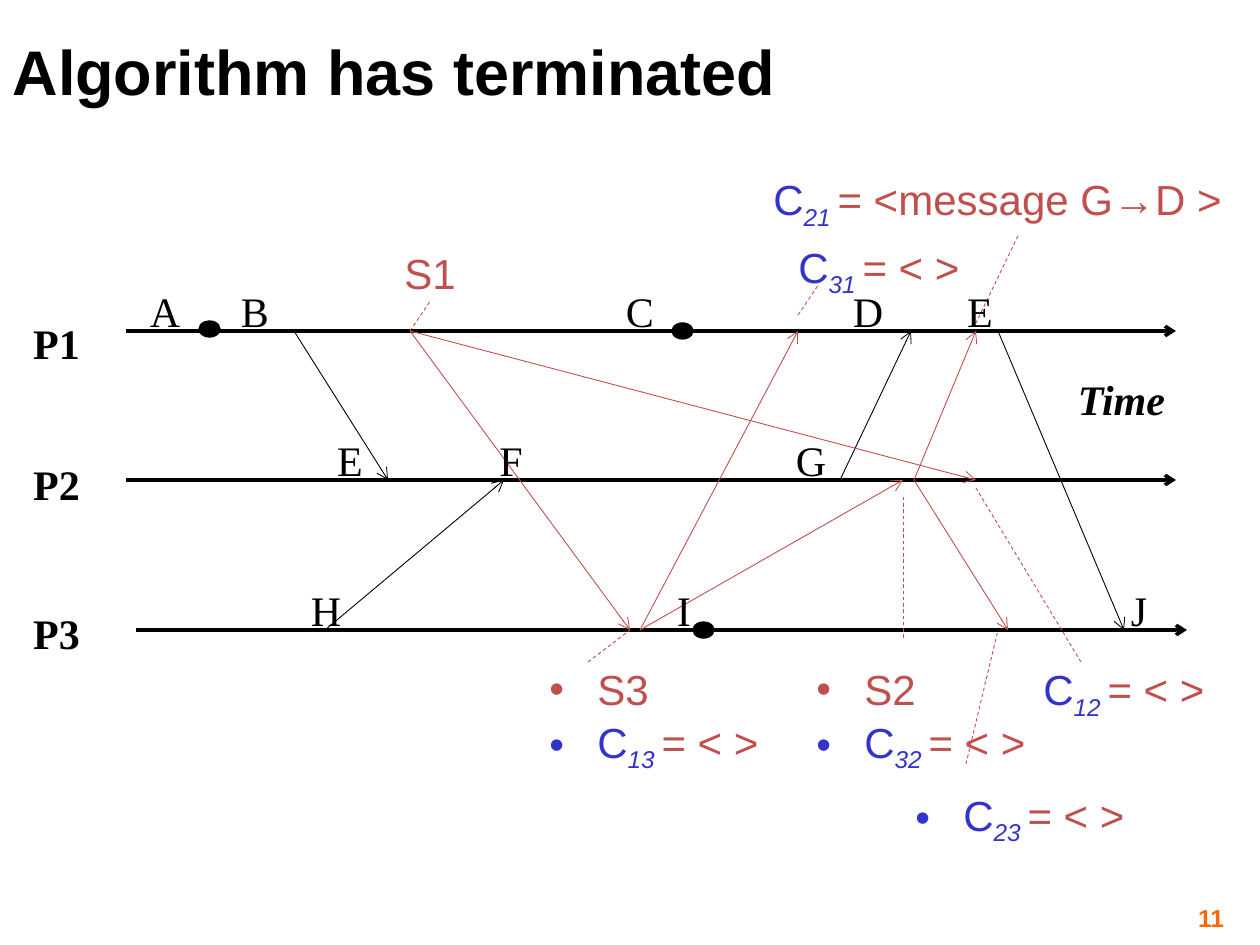
from typing import NamedTuple

from pptx import Presentation
from pptx.dml.color import RGBColor
from pptx.enum.dml import MSO_LINE
from pptx.enum.shapes import MSO_CONNECTOR, MSO_SHAPE
from pptx.enum.text import MSO_ANCHOR, PP_ALIGN
from pptx.oxml.ns import qn
from pptx.util import Pt
from lxml import etree

BLACK = RGBColor(0x00, 0x00, 0x00)
RED = RGBColor(0xC0, 0x50, 0x4D)
BLUE = RGBColor(0x33, 0x33, 0xCC)
ORANGE = RGBColor(0xFF, 0x66, 0x00)
SANS, SERIF = "Arial", "Times New Roman"
LEFT, CENTER, RIGHT = PP_ALIGN.LEFT, PP_ALIGN.CENTER, PP_ALIGN.RIGHT
TOP, MIDDLE = MSO_ANCHOR.TOP, MSO_ANCHOR.MIDDLE
STRAIGHT, DASH, OVAL = MSO_CONNECTOR.STRAIGHT, MSO_LINE.DASH, MSO_SHAPE.OVAL

PX = 914400 / 126
P1, P2, P3 = 331, 480, 630  # heights of the process lines
BULLET_INDENT = 48


class Span(NamedTuple):
    text: str
    color: RGBColor = BLACK
    subscript: bool = False


class Line(NamedTuple):
    start: tuple[int, int]
    end: tuple[int, int]
    color: RGBColor = BLACK
    points: float = 0.5
    dashed: bool = False


class Note(NamedTuple):
    left: int
    top: int
    width: int
    paragraphs: list[list[Span]]
    bulleted: bool = False


def emu(px: int) -> int:
    return round(px * PX)


def channel(index: str, content: str = "< >") -> list[Span]:
    """Recorded state of one channel, such as C12 = < >."""
    return [Span("C", BLUE), Span(f"{index} ", BLUE, True), Span(f"= {content}", RED)]


def draw_line(page, line: Line) -> None:
    connector = page.shapes.add_connector(
        STRAIGHT, *map(emu, (*line.start, *line.end)))
    connector.line.color.rgb = line.color
    connector.line.width = Pt(line.points)
    if line.dashed:
        connector.line.dash_style = DASH
    else:
        etree.SubElement(connector.line._ln, qn("a:tailEnd"), type="arrow")
    etree.SubElement(connector._element.spPr, qn("a:effectLst"))


def draw_event(page, x: int, y: int) -> None:
    dot = page.shapes.add_shape(OVAL, emu(x - 10), emu(y - 8), emu(21), emu(16))
    dot.shadow.inherit = False
    dot.fill.solid()
    dot.fill.fore_color.rgb = BLACK
    dot.line.color.rgb = BLACK
    dot.line.width = Pt(0.75)


def style(para, size: int, font: str, color: RGBColor,
          bold: bool = False, italic: bool = False) -> None:
    for span in para.runs:
        span.font.size = Pt(size)
        span.font.name = font
        span.font.color.rgb = color
        span.font.bold = bold
        span.font.italic = italic


def draw_label(page, text: str, center: int, top: int, width: int = 60,
               bold: bool = False, italic: bool = False) -> None:
    box = page.shapes.add_textbox(
        emu(center - width // 2), emu(top), emu(width), emu(63))
    frame = box.text_frame
    frame.word_wrap = False
    frame.margin_top = emu(10)
    frame.text = text
    frame.paragraphs[0].alignment = CENTER
    style(frame.paragraphs[0], 24, SERIF, BLACK, bold, italic)


def add_bullet(para, color: RGBColor) -> None:
    properties = para._p.get_or_add_pPr()
    properties.set("marL", str(emu(BULLET_INDENT)))
    properties.set("indent", str(-emu(BULLET_INDENT)))
    bullet_color = etree.SubElement(properties, qn("a:buClr"))
    etree.SubElement(bullet_color, qn("a:srgbClr"), val=str(color))
    etree.SubElement(properties, qn("a:buFont"), typeface=SANS)
    etree.SubElement(properties, qn("a:buChar"), char="•")


def draw_note(page, note: Note) -> None:
    box = page.shapes.add_textbox(emu(note.left), emu(note.top), emu(note.width),
                                  emu(12 + 51 * len(note.paragraphs)))
    frame = box.text_frame
    frame.word_wrap = True
    frame.margin_top = emu(10)
    for number, spans in enumerate(note.paragraphs):
        para = frame.add_paragraph() if number else frame.paragraphs[0]
        if number:
            para.space_before = Pt(1)
        if note.bulleted:
            add_bullet(para, spans[0].color)
        for span in spans:
            run = para.add_run()
            run.text = span.text
            run.font.size = Pt(24)
            run.font.name = SANS
            run.font.color.rgb = span.color
            if span.subscript:
                run.font.italic = True
                run._r.get_or_add_rPr().set("baseline", "-25000")


PROCESSES = [("P1", 307), ("P2", 449), ("P3", 598)]
EVENT_LABELS = {
    276: [("A", 165), ("B", 255), ("C", 640), ("D", 868), ("E", 980)],
    425: [("E", 350), ("F", 511), ("G", 811)],
    575: [("H", 326), ("I", 684), ("J", 1139)],
}
LOCAL_EVENTS = [(209, 329), (682, 331), (703, P3)]
LINES = [
    # Process time lines
    Line((126, P1), (1176, P1), points=2),
    Line((126, P2), (1176, P2), points=2),
    Line((136, P3), (1187, P3), points=2),
    # Application messages
    Line((294, P1), (388, P2)),
    Line((325, P3), (504, P2)),
    Line((840, P2), (911, P1)),
    Line((998, P1), (1124, P3)),
    # Markers
    Line((410, P1), (976, P2), RED),
    Line((410, P1), (630, P3), RED),
    Line((640, P3), (798, P1), RED),
    Line((640, P3), (903, P2), RED),
    Line((914, P2), (1008, P3), RED),
    Line((914, P2), (976, P1), RED),
    # Leaders from markers to notes
    Line((410, P1), (431, 300), RED, dashed=True),
    Line((588, 662), (630, P3), RED, dashed=True),
    Line((798, 315), (819, 284), RED, dashed=True),
    Line((903, 638), (903, 496), RED, dashed=True),
    Line((1081, 662), (976, 488), RED, dashed=True),
    Line((1018, 236), (976, 323), RED, dashed=True),
    Line((966, 764), (998, P3), RED, dashed=True),
]
NOTES = [
    Note(392, 237, 80, [[Span("S1", RED)]]),
    Note(761, 164, 483, [channel("21", "<message G→D >")]),
    Note(786, 231, 193, [channel("31")]),
    Note(1031, 654, 193, [channel("12")]),
    Note(537, 654, 241, [[Span("S3", RED)], channel("13")], True),
    Note(804, 654, 241, [[Span("S2", RED)], channel("32")], True),
    Note(903, 779, 241, [channel("23")], True),
]


def main() -> None:
    deck = Presentation()
    deck.slide_width, deck.slide_height = emu(1260), emu(945)
    page = deck.slides.add_slide(deck.slide_layouts[5])

    # Title
    title = page.shapes.title
    title.left, title.top, title.width, title.height = map(emu, (0, 21, 1207, 147))
    title.text_frame.text = "Algorithm has terminated"
    title.text_frame.vertical_anchor = TOP
    title.text_frame.margin_top = emu(12)
    title.text_frame.paragraphs[0].alignment = LEFT
    style(title.text_frame.paragraphs[0], 36, SANS, BLACK, bold=True)

    # Space-time diagram
    for line in LINES:
        draw_line(page, line)
    for x, y in LOCAL_EVENTS:
        draw_event(page, x, y)
    for name, top in PROCESSES:
        draw_label(page, name, 56, top, 73, bold=True)
    draw_label(page, "Time", 1121, 363, 113, bold=True, italic=True)
    for top, labels in EVENT_LABELS.items():
        for name, center in labels:
            draw_label(page, name, center, top)
    for note in NOTES:
        draw_note(page, note)

    # Page number
    number = page.shapes.add_textbox(*map(emu, (935, 903, 294, 29))).text_frame
    number.word_wrap = True
    number.margin_left = number.margin_right = emu(5)
    number.margin_top = number.margin_bottom = emu(5)
    number.vertical_anchor = MIDDLE
    number.text = "11"
    number.paragraphs[0].alignment = RIGHT
    style(number.paragraphs[0], 14, SANS, ORANGE, bold=True)

    deck.save("out.pptx")


if __name__ == "__main__":
    main()
